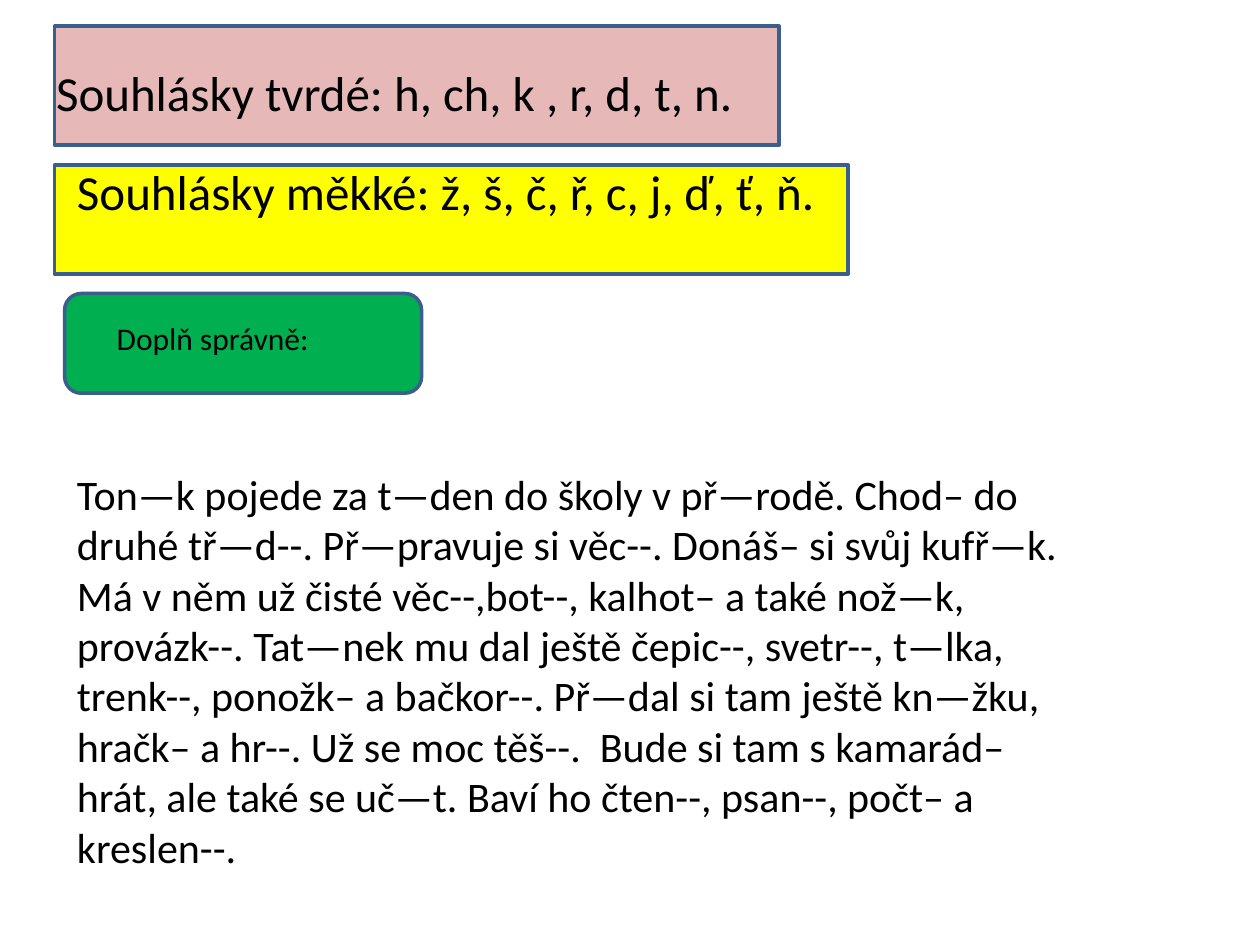
"""Builds a Czech spelling exercise on hard and soft consonants."""
from pptx import Presentation
from pptx.dml.color import RGBColor
from pptx.enum.shapes import MSO_SHAPE
from pptx.enum.text import MSO_AUTO_SIZE
from pptx.util import Pt

RECTANGLE = MSO_SHAPE.RECTANGLE
ROUNDED = MSO_SHAPE.ROUNDED_RECTANGLE
GROW = MSO_AUTO_SIZE.SHAPE_TO_FIT_TEXT

BLACK = RGBColor(0x00, 0x00, 0x00)
BLUE = RGBColor(0x3A, 0x5F, 0x8C)
PINK = RGBColor(0xE6, 0xB9, 0xB8)
YELLOW = RGBColor(0xFF, 0xFF, 0x00)
GREEN = RGBColor(0x00, 0xB0, 0x50)

EXERCISE = (
    "Ton—k pojede za t—den do školy v př—rodě. Chod– do druhé tř—d--. "
    "Př—pravuje si věc--. Donáš– si svůj kufř—k. Má v něm už čisté "
    "věc--,bot--, kalhot– a také nož—k, provázk--. Tat—nek mu dal ještě "
    "čepic--, svetr--, t—lka, trenk--, ponožk– a bačkor--. Př—dal si tam "
    "ještě kn—žku, hračk– a hr--. Už se moc těš--.  Bude si tam s kamarád– "
    "hrát, ale také se uč—t. Baví ho čten--, psan--, počt– a kreslen--."
)


class Worksheet:
    """Holds the style and the current slide."""

    font = "Calibri"
    text_color = BLACK
    border_color = BLUE
    border_width = Pt(2)

    def __init__(self, slide):
        self.slide = slide

    def panel(self, kind, left, top, width, height, color):
        """Adds a filled, bordered panel."""
        panel = self.slide.shapes.add_shape(
            kind, Pt(left), Pt(top), Pt(width), Pt(height))
        panel.shadow.inherit = False
        panel.fill.solid()
        panel.fill.fore_color.rgb = color
        panel.line.color.rgb = self.border_color
        panel.line.width = self.border_width

    def text(self, wording, left, top, width, height, size):
        """Adds a wrapping text box with one run."""
        box = self.slide.shapes.add_textbox(
            Pt(left), Pt(top), Pt(width), Pt(height))
        frame = box.text_frame
        frame.word_wrap = True
        frame.auto_size = GROW
        run = frame.paragraphs[0].add_run()
        run.text = wording
        run.font.name = self.font
        run.font.size = Pt(size)
        run.font.color.rgb = self.text_color


def main():
    """Builds and saves the worksheet."""
    deck = Presentation()
    deck.slide_width, deck.slide_height = Pt(720), Pt(540)
    sheet = Worksheet(deck.slides.add_slide(deck.slide_layouts[6]))

    sheet.panel(ROUNDED, 36.9, 167.7, 204, 57, GREEN)
    sheet.panel(RECTANGLE, 31.2, 15, 414, 68, PINK)
    sheet.panel(RECTANGLE, 31.2, 94.3, 453.5, 62.4, YELLOW)

    sheet.text("Souhlásky tvrdé: h, ch, k , r, d, t, n.",
               25, 32, 590, 41, 28)
    sheet.text("Souhlásky měkké: ž, š, č, ř, c, j, ď, ť, ň.",
               36.9, 88.7, 442, 41, 28)
    sheet.text("Doplň správně:", 59.6, 179, 153, 29, 18)
    sheet.text(EXERCISE, 36.9, 264, 584, 240, 24)

    deck.save("out.pptx")


if __name__ == "__main__":
    main()
